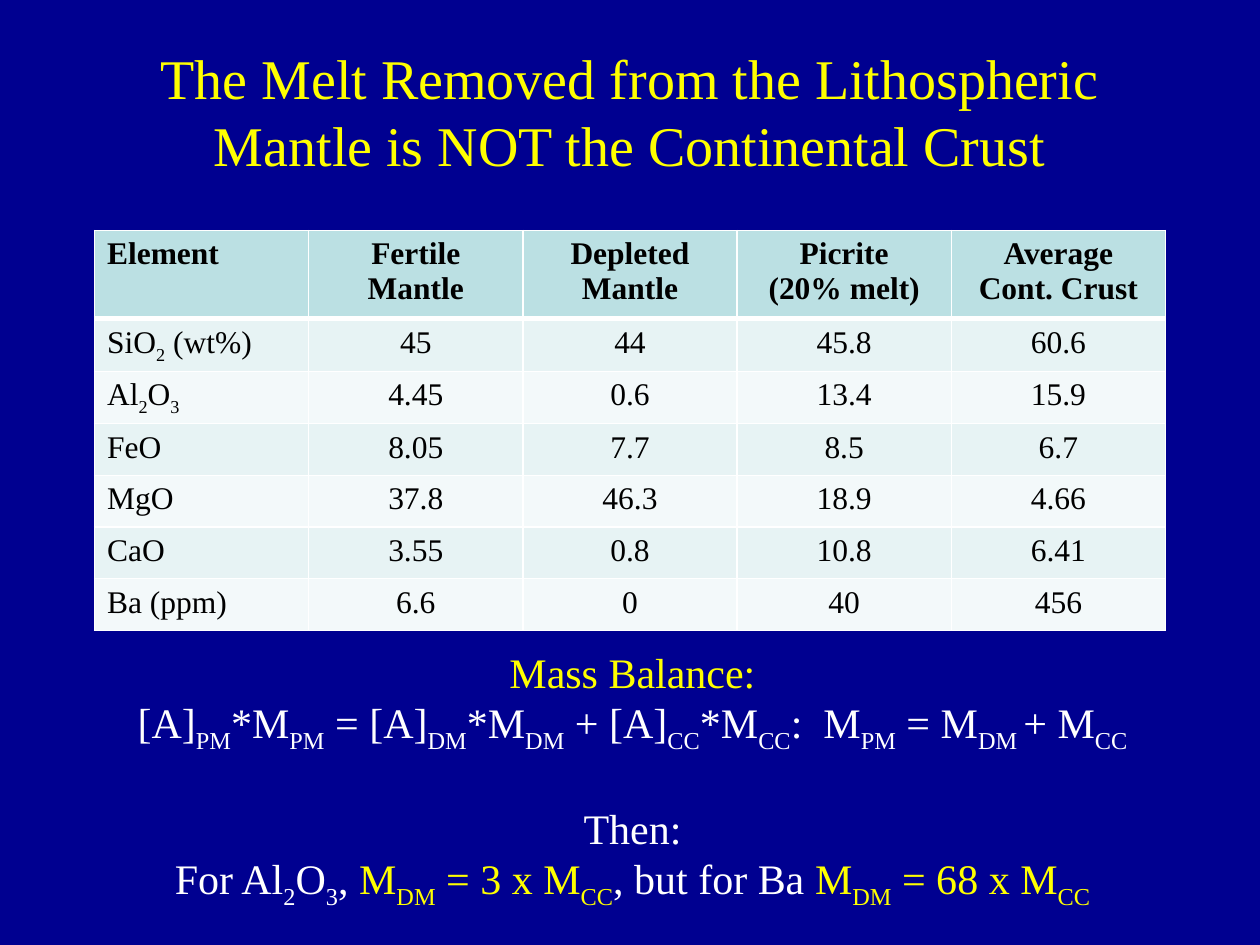
from lxml.etree import SubElement
from pptx import Presentation
from pptx.dml.color import RGBColor
from pptx.enum.text import MSO_ANCHOR, MSO_AUTO_SIZE, PP_ALIGN
from pptx.oxml.ns import qn
from pptx.util import Inches, Pt

NAVY = RGBColor(0x00, 0x00, 0x90)
YELLOW = RGBColor(0xFF, 0xFF, 0x00)
WHITE = RGBColor(0xFF, 0xFF, 0xFF)
BLACK = RGBColor(0x00, 0x00, 0x00)
HEADER_TEAL = RGBColor(0xBB, 0xE0, 0xE3)
BANDS = (RGBColor(0xE7, 0xF3, 0xF4), RGBColor(0xF3, 0xF9, 0xFA))
FONT = "Times New Roman"

# The slide is a grid of 40 columns by 30 rows; boxes are column, row, columns, rows
COLUMNS, ROWS = 40, 30
CELL = Inches(0.25)
TITLE_BOX = (3, 1, 34, 5)
TABLE_BOX = (3, 7.32, 34, 12.64)
BALANCE_BOX = (0.68, 20.32, 38.8, 7.96)
HEADER_ROWS = 2.8

# Text between tildes is set as subscript
COMPOSITIONS = [
    ("Element", "Fertile Mantle", "Depleted Mantle", "Picrite\n(20% melt)", "Average Cont. Crust"),
    ("SiO~2~ (wt%)", "45", "44", "45.8", "60.6"),
    ("Al~2~O~3~", "4.45", "0.6", "13.4", "15.9"),
    ("FeO", "8.05", "7.7", "8.5", "6.7"),
    ("MgO", "37.8", "46.3", "18.9", "4.66"),
    ("CaO", "3.55", "0.8", "10.8", "6.41"),
    ("Ba (ppm)", "6.6", "0", "40", "456"),
]
# Each line: points of space before, then coloured pieces
BALANCE_LINES = [
    (0, [("Mass Balance:", YELLOW)]),
    (0, [("[A]~PM~*M~PM~ = [A]~DM~*M~DM~ + [A]~CC~*M~CC~:  M~PM~ = M~DM ~+ M~CC~", WHITE)]),
    (27.6, [("Then:", WHITE)]),
    (0, [("For Al~2~O~3~, ", WHITE), ("M~DM~ = 3 x M~CC~", YELLOW),
         (", but for Ba ", WHITE), ("M~DM~ = 68 x M~CC~", YELLOW)]),
]


def on_grid(box):
    return [round(length * CELL) for length in box]


def add_runs(paragraph, marked_text, size, color, bold=False):
    for index, piece in enumerate(marked_text.split("~")):
        if not piece:
            continue
        run = paragraph.add_run()
        run.text = piece
        font = run.font
        font.name, font.size, font.bold = FONT, Pt(size), bold
        font.color.rgb = color
        if index % 2:
            font._element.set("baseline", "-25000")


def next_paragraph(frame, index):
    return frame.add_paragraph() if index else frame.paragraphs[0]


def add_title(slide, box):
    title = slide.shapes.title
    title.left, title.top, title.width, title.height = on_grid(box)
    frame = title.text_frame
    frame.auto_size = MSO_AUTO_SIZE.NONE
    frame.vertical_anchor = MSO_ANCHOR.MIDDLE
    heading = frame.paragraphs[0]
    heading.alignment = PP_ALIGN.CENTER
    add_runs(heading, "The Melt Removed from the Lithospheric Mantle is NOT the Continental Crust",
             32, YELLOW)


def add_borders(cell, widths):
    properties = cell._tc.get_or_add_tcPr()
    for side, width in widths.items():
        line = SubElement(properties, qn(f"a:ln{side}"), w=str(Pt(width)))
        fill = SubElement(line, qn("a:solidFill"))
        SubElement(fill, qn("a:srgbClr"), val=str(WHITE))


def add_composition_table(slide, box):
    row_count, column_count = len(COMPOSITIONS), len(COMPOSITIONS[0])
    table = slide.shapes.add_table(row_count, column_count, *on_grid(box)).table
    body_height = (box[3] - HEADER_ROWS) / (row_count - 1)
    for r, values in enumerate(COMPOSITIONS):
        is_header = r == 0
        table.rows[r].height = round((HEADER_ROWS if is_header else body_height) * CELL)
        for c, value in enumerate(values):
            cell = table.cell(r, c)
            # The rule under the header is heavier than the rest
            add_borders(cell, {"L": 1, "R": 1, "T": 3 if r == 1 else 1, "B": 3 if is_header else 1})
            cell.fill.solid()
            cell.fill.fore_color.rgb = HEADER_TEAL if is_header else BANDS[(r - 1) % 2]
            for index, line in enumerate(value.split("\n")):
                paragraph = next_paragraph(cell.text_frame, index)
                paragraph.alignment = PP_ALIGN.CENTER if c else PP_ALIGN.LEFT
                add_runs(paragraph, line, 18, BLACK, bold=is_header)


def add_mass_balance(slide, box):
    frame = slide.shapes.add_textbox(*on_grid(box)).text_frame
    frame.word_wrap = True
    for index, (space_before, pieces) in enumerate(BALANCE_LINES):
        paragraph = next_paragraph(frame, index)
        paragraph.alignment = PP_ALIGN.CENTER
        paragraph.space_before = Pt(space_before)
        for text, color in pieces:
            add_runs(paragraph, text, 24, color)


def main():
    deck = Presentation()
    deck.slide_width, deck.slide_height = COLUMNS * CELL, ROWS * CELL
    slide = deck.slides.add_slide(deck.slide_layouts.get_by_name("Title Only"))
    slide.background.fill.solid()
    slide.background.fill.fore_color.rgb = NAVY
    add_title(slide, TITLE_BOX)
    add_composition_table(slide, TABLE_BOX)
    add_mass_balance(slide, BALANCE_BOX)
    deck.save("out.pptx")


if __name__ == "__main__":
    main()
